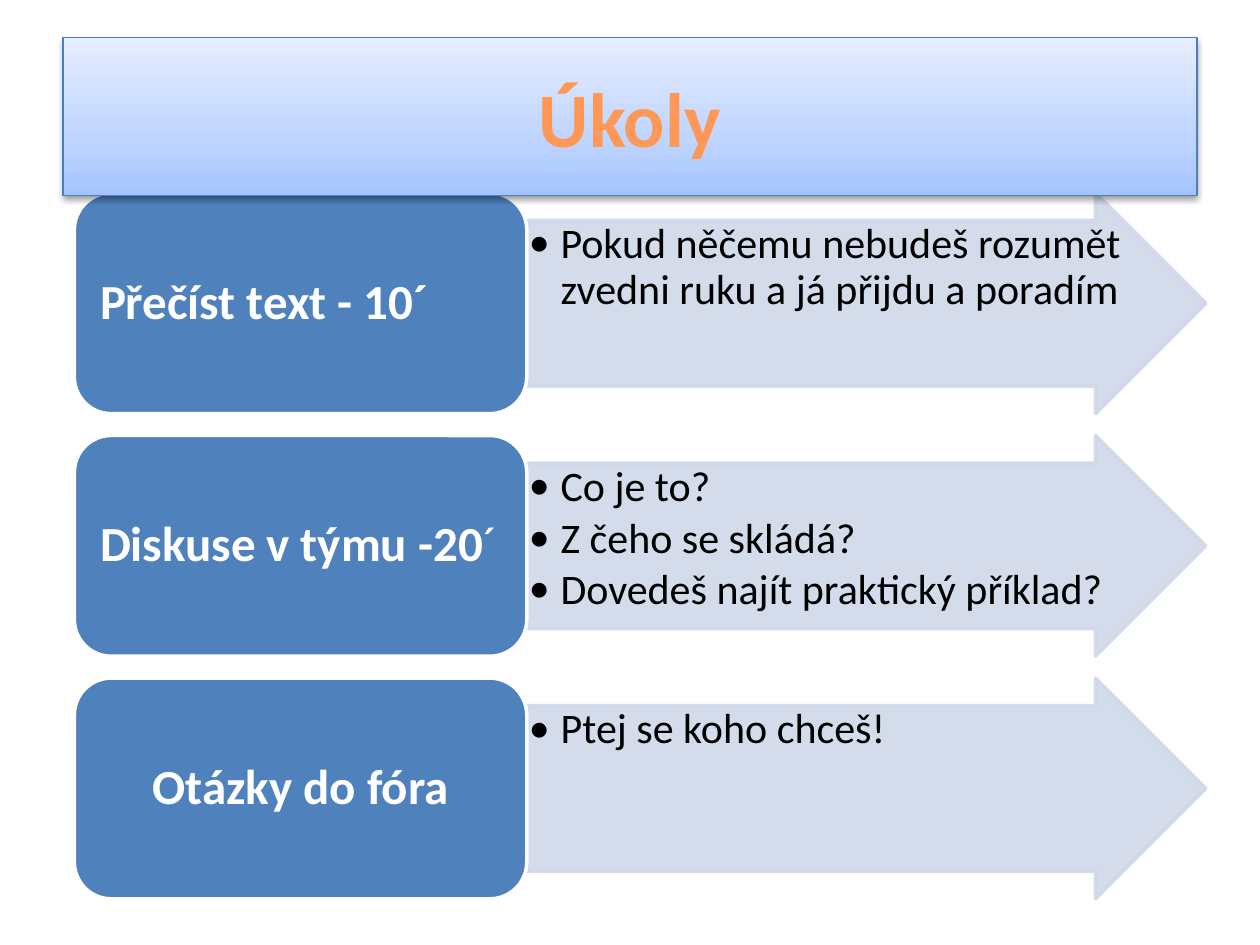
import pptx
import pptx.util
import pptx.dml.color
import pptx.enum.shapes
import pptx.enum.text
import pptx.oxml
import pptx.oxml.ns

Cm = pptx.util.Cm
Pt = pptx.util.Pt
SHAPES = pptx.enum.shapes.MSO_SHAPE
ALIGN = pptx.enum.text.PP_ALIGN
ANCHOR = pptx.enum.text.MSO_ANCHOR

TITLE = "Úkoly"
TASKS = [
    {"label": [("Přečíst text - 10´", True)], "align": ALIGN.LEFT,
     "notes": ["Pokud něčemu nebudeš rozumět zvedni ruku a já přijdu a poradím"]},
    {"label": [("Diskuse v týmu -20", True), ("´", False)], "align": ALIGN.LEFT,
     "notes": ["Co je to?", "Z čeho se skládá?", "Dovedeš najít praktický příklad?"]},
    {"label": [("Otázky do fóra", True)], "align": ALIGN.CENTER,
     "notes": ["Ptej se koho chceš!"]},
]
COLORS = {"box": "4F81BD", "arrow": "D0D8E8", "white": "FFFFFF", "black": "000000",
          "title": "FF9856", "title_line": "4B7EBC"}
TITLE_GRADIENT = [(0, "A4C4FF"), (35, "BFD4FF"), (100, "E6EEFF")]
FONT = "Calibri"

LEFT, TOP, ROW_HEIGHT, ROW_STEP = 1.5, 3.89, 4.45, 4.89
BOX_WIDTH, ARROW_WIDTH = 9.12, 13.69
NAMESPACE = pptx.oxml.ns.nsdecls("a")


def rgb(name):
    return pptx.dml.color.RGBColor.from_string(COLORS[name])


def add_block(slide, kind, position, fill, line, line_width, insets, anchor):
    shape = slide.shapes.add_shape(kind, *(Cm(value) for value in position))
    shape.shadow.inherit = False
    shape.fill.solid()
    shape.fill.fore_color.rgb = rgb(fill)
    shape.line.color.rgb = rgb(line)
    shape.line.width = Pt(line_width)
    frame = shape.text_frame
    frame.word_wrap = True
    frame.vertical_anchor = anchor
    frame.margin_left, frame.margin_top, frame.margin_right, frame.margin_bottom = map(Cm, insets)
    return shape


def add_run(paragraph, text, size, color, bold=False):
    run = paragraph.add_run()
    run.text = text
    run.font.name = FONT
    run.font.size = Pt(size)
    run.font.bold = bold
    run.font.color.rgb = rgb(color)


def set_bullet(paragraph):
    properties = paragraph._p.get_or_add_pPr()
    properties.set("marL", str(Cm(0.64)))
    properties.set("indent", str(-Cm(0.64)))
    properties.append(pptx.oxml.parse_xml(f'<a:buFont {NAMESPACE} typeface="{FONT}"/>'))
    properties.append(pptx.oxml.parse_xml(f'<a:buChar {NAMESPACE} char="•"/>'))


def make_translucent(shape, percent):
    for color in shape._element.spPr.iter(pptx.oxml.ns.qn("a:srgbClr")):
        color.append(pptx.oxml.parse_xml(f'<a:alpha {NAMESPACE} val="{percent * 1000}"/>'))


def add_arrow(slide, top, notes):
    arrow = add_block(slide, SHAPES.RIGHT_ARROW, (LEFT + BOX_WIDTH, top, ARROW_WIDTH, ROW_HEIGHT),
                      "arrow", "arrow", 2, (0.04, 0.04, 0.04, 0.04), ANCHOR.TOP)
    arrow.adjustments[0] = 0.75
    arrow.adjustments[1] = 0.5
    make_translucent(arrow, 90)
    frame = arrow.text_frame
    for index, note in enumerate(notes):
        paragraph = frame.add_paragraph() if index else frame.paragraphs[0]
        paragraph.alignment = ALIGN.LEFT
        paragraph.line_spacing = 0.9
        paragraph.space_after = Pt(3.6)
        set_bullet(paragraph)
        add_run(paragraph, note, 24, "black")


def add_label(slide, top, runs, align):
    box = add_block(slide, SHAPES.ROUNDED_RECTANGLE, (LEFT, top, BOX_WIDTH, ROW_HEIGHT),
                    "box", "white", 2, (0.3, 0.15, 0.3, 0.15), ANCHOR.MIDDLE)
    paragraph = box.text_frame.paragraphs[0]
    paragraph.alignment = align
    paragraph.line_spacing = 0.9
    for text, bold in runs:
        add_run(paragraph, text, 28, "white", bold)


def add_title(slide):
    banner = add_block(slide, SHAPES.RECTANGLE, (1.27, 0.76, 22.86, 3.18), "white", "title_line",
                       0.75, (0.25, 0.13, 0.25, 0.13), ANCHOR.MIDDLE)
    stops = "".join(f'<a:gs pos="{position * 1000}"><a:srgbClr val="{color}"/></a:gs>'
                    for position, color in TITLE_GRADIENT)
    gradient = pptx.oxml.parse_xml(
        f'<a:gradFill {NAMESPACE} rotWithShape="1"><a:gsLst>{stops}</a:gsLst>'
        '<a:lin ang="16200000" scaled="1"/></a:gradFill>')
    properties = banner._element.spPr
    properties.replace(properties.find(pptx.oxml.ns.qn("a:solidFill")), gradient)
    properties.find(pptx.oxml.ns.qn("a:effectLst")).append(pptx.oxml.parse_xml(
        f'<a:outerShdw {NAMESPACE} blurRad="{Pt(3.1)}" dist="{Pt(1.6)}" dir="5400000" '
        f'rotWithShape="0"><a:srgbClr val="{COLORS["black"]}"><a:alpha val="38000"/>'
        '</a:srgbClr></a:outerShdw>'))
    paragraph = banner.text_frame.paragraphs[0]
    paragraph.alignment = ALIGN.CENTER
    add_run(paragraph, TITLE, 44, "title", True)


def main():
    presentation = pptx.Presentation()
    presentation.slide_width = Cm(25.4)
    presentation.slide_height = Cm(19.05)
    slide = presentation.slides.add_slide(presentation.slide_layouts[6])
    for row, task in enumerate(TASKS):
        top = TOP + row * ROW_STEP
        add_arrow(slide, top, task["notes"])
        add_label(slide, top, task["label"], task["align"])
    add_title(slide)
    presentation.save("out.pptx")


if __name__ == "__main__":
    main()
